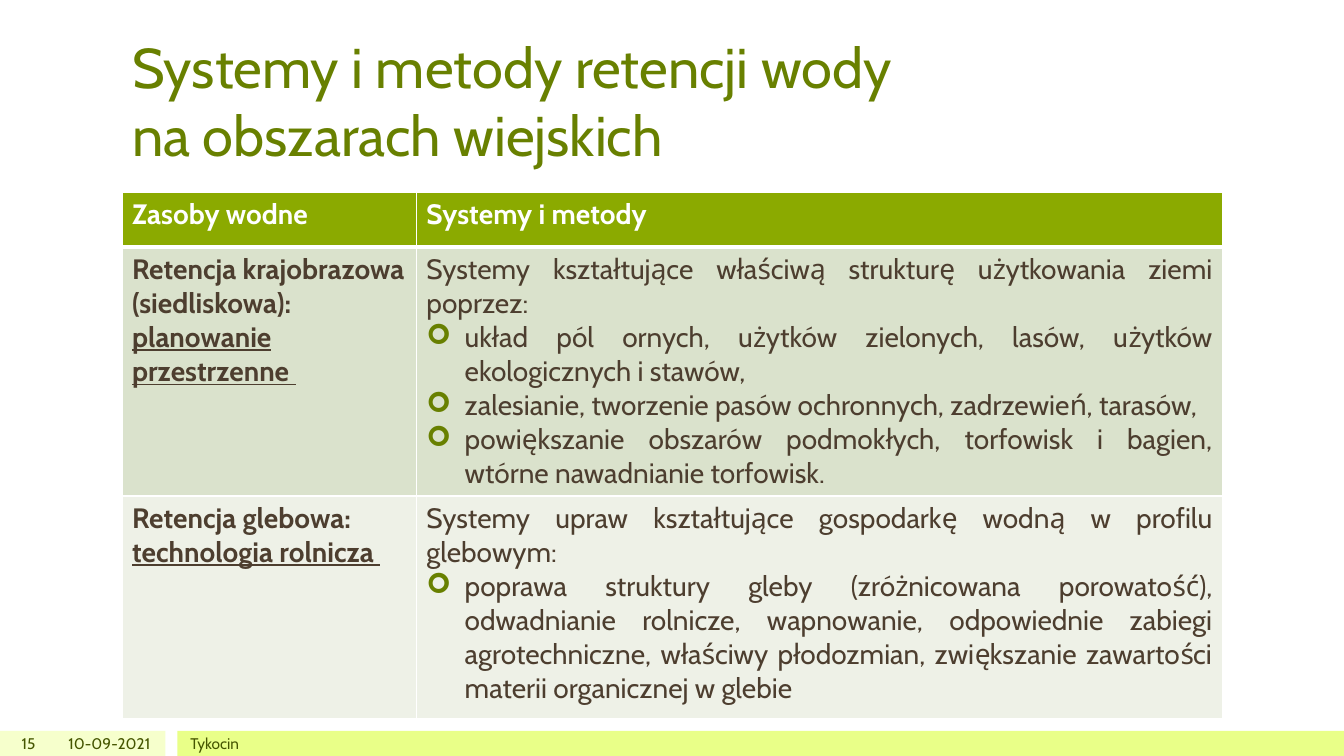
from lxml.etree import SubElement
from pptx import Presentation
from pptx.dml.color import RGBColor
from pptx.enum.shapes import MSO_SHAPE as Shape
from pptx.enum.text import MSO_ANCHOR as Anchor, MSO_AUTO_SIZE as AutoSize, PP_ALIGN as Align
from pptx.oxml.ns import qn
from pptx.util import Inches, Pt

COLORS = {
    "title": "688000", "header": "8BAA00", "body": "4D3E2F", "white": "FFFFFF",
    "row_dark": "DAE2CC", "row_light": "EEF1E7",
    "bar_pale": "F6FFCC", "bar_bright": "E9FF88", "footer": "455500",
}
BULLET_INDENT = Inches(0.38)


def color(name):
    return RGBColor.from_string(COLORS[name])


def write(paragraph, text, size=20, ink="body", bold=False, underline=False,
          align=Align.LEFT, font="Cabin"):
    paragraph.alignment = align
    for index, line in enumerate(text.split("\n")):
        if index:
            paragraph.add_line_break()
        run = paragraph.add_run()
        run.text = line
        run.font.name, run.font.size = font, Pt(size)
        run.font.bold, run.font.underline = bold, underline
        run.font.color.rgb = color(ink)


def add_bullet(paragraph):
    properties = paragraph._p.get_or_add_pPr()
    properties.set("marL", str(BULLET_INDENT))
    properties.set("indent", str(-BULLET_INDENT))
    bullet_color = SubElement(properties, qn("a:buClr"))
    SubElement(bullet_color, qn("a:srgbClr"), val=COLORS["title"])
    SubElement(properties, qn("a:buFont"), typeface="Wingdings")
    SubElement(properties, qn("a:buChar"), char="➢")


def add_borders(cell, bottom=1):
    properties = cell._tc.get_or_add_tcPr()
    for index, (side, width) in enumerate((("L", 1), ("R", 1), ("T", 1), ("B", bottom))):
        line = SubElement(properties, qn(f"a:ln{side}"), w=str(Pt(width)))
        fill = SubElement(line, qn("a:solidFill"))
        SubElement(fill, qn("a:srgbClr"), val=COLORS["white"])
        properties.insert(index, line)


class SlideBuilder:
    """Builds a slide whose lengths are percentages of its width and height."""

    def __init__(self, presentation):
        self.width = presentation.slide_width
        self.height = presentation.slide_height
        self.slide = presentation.slides.add_slide(presentation.slide_layouts[5])

    def across(self, share):
        return round(self.width * share / 100)

    def down(self, share):
        return round(self.height * share / 100)

    def place(self, left, top, width, height):
        return self.across(left), self.down(top), self.across(width), self.down(height)

    def title(self, text, *box):
        shape = self.slide.shapes.title
        shape.left, shape.top, shape.width, shape.height = self.place(*box)
        frame = shape.text_frame
        frame.auto_size, frame.vertical_anchor = AutoSize.NONE, Anchor.BOTTOM
        write(frame.paragraphs[0], text, size=40, ink="title")

    def bar(self, fill, *box):
        shape = self.slide.shapes.add_shape(Shape.RECTANGLE, *self.place(*box))
        shape.shadow.inherit = False
        shape.fill.solid()
        shape.fill.fore_color.rgb = color(fill)
        shape.line.fill.background()

    def label(self, text, align, *box):
        frame = self.slide.shapes.add_textbox(*self.place(*box)).text_frame
        frame.word_wrap, frame.vertical_anchor = True, Anchor.MIDDLE
        frame.margin_top = frame.margin_bottom = 0
        write(frame.paragraphs[0], text, size=11, ink="footer", align=align)

    def cell(self, cell, fill, bottom=1):
        cell.fill.solid()
        cell.fill.fore_color.rgb = color(fill)
        add_borders(cell, bottom)
        return cell.text_frame

    def table(self, left, top, columns, rows, headings, records):
        box = self.place(left, top, sum(columns), sum(rows))
        table = self.slide.shapes.add_table(len(rows), len(columns), *box).table
        for column, share in zip(table.columns, columns):
            column.width = self.across(share)
        for row, share in zip(table.rows, rows):
            row.height = self.down(share)
        for index, heading in enumerate(headings):
            frame = self.cell(table.cell(0, index), "header", bottom=3)
            write(frame.paragraphs[0], heading, ink="white", bold=True)
        for index, (fill, resource, approach, intro, methods) in enumerate(records, 1):
            paragraph = self.cell(table.cell(index, 0), fill).paragraphs[0]
            write(paragraph, resource, bold=True)
            write(paragraph, approach, bold=True, underline=True)
            frame = self.cell(table.cell(index, 1), fill)
            write(frame.paragraphs[0], intro, align=Align.JUSTIFY)
            for method in methods:
                paragraph = frame.add_paragraph()
                add_bullet(paragraph)
                write(paragraph, method, align=Align.JUSTIFY)


HEADINGS = ("Zasoby wodne", "Systemy i metody")
RECORDS = (
    ("row_dark", "Retencja krajobrazowa (siedliskowa): ", "planowanie przestrzenne ",
     "Systemy kształtujące właściwą strukturę użytkowania ziemi poprzez:",
     ("układ pól ornych, użytków zielonych, lasów, użytków ekologicznych i stawów,",
      "zalesianie, tworzenie pasów ochronnych, zadrzewień, tarasów,",
      "powiększanie obszarów podmokłych, torfowisk i bagien, "
      "wtórne nawadnianie torfowisk.")),
    ("row_light", "Retencja glebowa: ", "technologia rolnicza ",
     "Systemy upraw kształtujące gospodarkę wodną w profilu glebowym:",
     ("poprawa struktury gleby (zróżnicowana porowatość), odwadnianie rolnicze, "
      "wapnowanie, odpowiednie zabiegi agrotechniczne, właściwy płodozmian, "
      "zwiększanie zawartości materii organicznej w glebie",)),
)


def main():
    presentation = Presentation()
    presentation.slide_width, presentation.slide_height = Inches(13.33), Inches(7.5)
    builder = SlideBuilder(presentation)
    footer = (96.67, 3.33)
    for fill, left, width in (("bar_pale", 0, 12.3), ("bar_bright", 13.2, 86.8)):
        builder.bar(fill, left, footer[0], width, footer[1])
    builder.title("Systemy i metody retencji wody \nna obszarach wiejskich",
                  9.08, 5.6, 84.92, 17.2)
    builder.table(9.08, 25.47, (21.9, 60), (7.2, 32, 29.47), HEADINGS, RECORDS)
    for text, align, left, width in (("10-09-2021", Align.RIGHT, 3.75, 8.18),
                                     ("Tykocin", Align.LEFT, 13.43, 75),
                                     ("15", Align.RIGHT, 0, 3.38)):
        builder.label(text, align, left, footer[0], width, footer[1])
    presentation.save("out.pptx")


if __name__ == "__main__":
    main()
